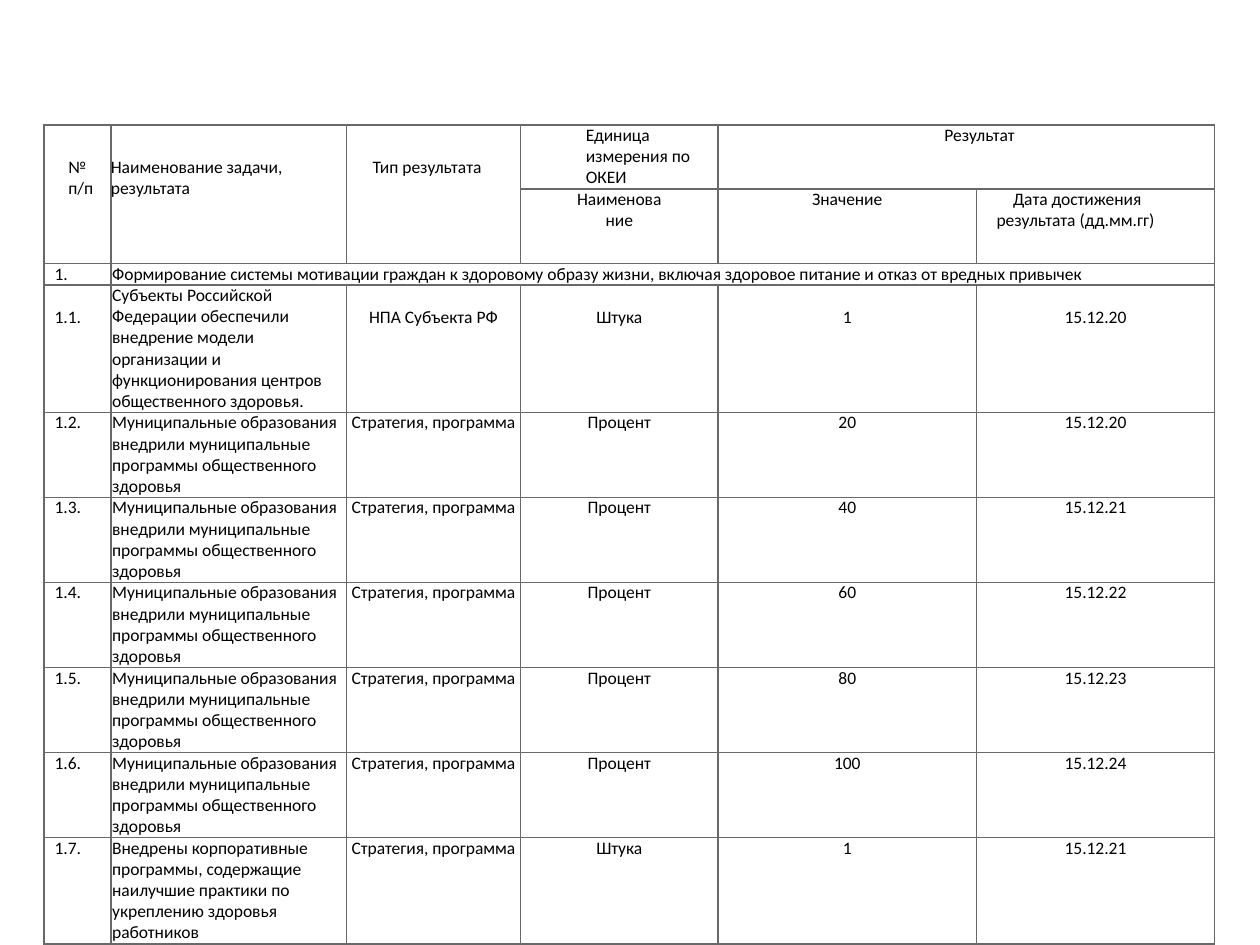
from dataclasses import dataclass

from lxml import etree
from pptx import Presentation
from pptx.dml.color import RGBColor
from pptx.enum import text
from pptx.oxml import ns
from pptx.util import Pt

BLACK = RGBColor(0x00, 0x00, 0x00)
GREY = RGBColor(0x69, 0x69, 0x69)
FONT, SIZE = "Calibri", 10
LEFT, CENTER = text.PP_ALIGN.LEFT, text.PP_ALIGN.CENTER

COL_WIDTHS = [38.2, 134.6, 99.4, 113, 147.6, 136.1]
ROW_HEIGHTS = [36.6, 42.8, 12.1, 72.8] + [48.6] * 5 + [60.8]
HEADER_TOP, FIRST_RESULT_TOP = 18.5, 12.4


@dataclass(frozen=True)
class Format:
    """Paragraph alignment and indents, in points."""
    align: int = LEFT
    left: float = 0
    right: float = 0
    first: float = 0


@dataclass(frozen=True)
class Header:
    row: int
    col: int
    label: str
    fmt: Format = Format()
    top: float = 0
    rows: int = 1
    cols: int = 1


@dataclass(frozen=True)
class Result:
    number: str
    name: str
    kind: str
    unit: str
    value: str
    date: str


NUMBER, NAME = Format(left=6), Format(left=0.7)
KIND = Format(CENTER)
UNIT = Format(CENTER, 30.2, 30.2)
VALUE = Format(CENTER, 45.4, 45.4)
DATE = Format(CENTER, 42.5, 42.5)

HEADERS = [
    Header(0, 0, "№ п/п", Format(left=13.9), HEADER_TOP, rows=2),
    Header(0, 1, "Наименование задачи, результата", top=HEADER_TOP, rows=2),
    Header(0, 2, "Тип результата", Format(left=15), top=HEADER_TOP, rows=2),
    Header(0, 3, "Единица измерения по ОКЕИ", Format(left=37.4)),
    Header(0, 4, "Результат", Format(CENTER, 106.6, 91.5), cols=2),
    Header(1, 3, "Наименование", UNIT),
    Header(1, 4, "Значение", VALUE),
    Header(1, 5, "Дата достижения результата (дд.мм.гг)",
           Format(left=11.5, right=25, first=9.4)),
    Header(2, 0, "1.", NUMBER),
    Header(2, 1, "Формирование системы мотивации граждан к здоровому образу "
                 "жизни, включая здоровое питание и отказ от вредных привычек",
           NAME, cols=5),
]

MUNICIPAL = ("Муниципальные образования внедрили муниципальные программы "
             "общественного здоровья")
STRATEGY = "Стратегия, программа"
RESULTS = [
    Result("1.1.", "Субъекты Российской Федерации обеспечили внедрение модели "
                   "организации и функционирования центров общественного "
                   "здоровья.",
           "НПА Субъекта РФ", "Штука", "1", "15.12.20"),
    *[Result(f"1.{i + 2}.", MUNICIPAL, STRATEGY, "Процент", str(20 * (i + 1)),
             f"15.12.{20 + i}") for i in range(5)],
    Result("1.7.", "Внедрены корпоративные программы, содержащие наилучшие "
                   "практики по укреплению здоровья работников",
           STRATEGY, "Штука", "1", "15.12.21"),
]


def style_cell(cell) -> None:
    """Remove margins and fill, and draw a thin border on every side."""
    cell.margin_left = cell.margin_right = Pt(0)
    cell.margin_top = cell.margin_bottom = Pt(0)
    cell.fill.background()
    props = cell._tc.get_or_add_tcPr()
    for i, side in enumerate(("a:lnL", "a:lnR", "a:lnT", "a:lnB")):
        line = etree.Element(ns.qn(side), w=str(Pt(1)))
        fill = etree.SubElement(line, ns.qn("a:solidFill"))
        etree.SubElement(fill, ns.qn("a:srgbClr"), val=str(GREY))
        props.insert(i, line)


def write_cell(cell, label: str, fmt: Format, top: float = 0) -> None:
    cell.margin_top = Pt(top)
    p = cell.text_frame.paragraphs[0]
    p.alignment = fmt.align
    props = p._p.get_or_add_pPr()
    for name, length in (("marL", fmt.left), ("marR", fmt.right),
                         ("indent", fmt.first)):
        props.set(name, str(Pt(length)))
    r = p.add_run()
    r.text = label
    r.font.name, r.font.size = FONT, Pt(SIZE)
    r.font.color.rgb = BLACK


def add_grid(s):
    """Add the empty bordered table."""
    frame = s.shapes.add_table(len(ROW_HEIGHTS), len(COL_WIDTHS),
                               Pt(25.2), Pt(71.3),
                               Pt(sum(COL_WIDTHS)), Pt(sum(ROW_HEIGHTS)))
    table = frame.table
    table.first_row = table.horz_banding = False
    for column, width in zip(table.columns, COL_WIDTHS):
        column.width = Pt(width)
    for row, height in zip(table.rows, ROW_HEIGHTS):
        row.height = Pt(height)
    for cell in table.iter_cells():
        style_cell(cell)
    return table


def main() -> None:
    prs = Presentation()
    prs.slide_width, prs.slide_height = Pt(720), Pt(540)
    s = prs.slides.add_slide(prs.slide_layouts[6])
    table = add_grid(s)

    # Header rows and the task row
    for h in HEADERS:
        cell = table.cell(h.row, h.col)
        if h.rows > 1 or h.cols > 1:
            cell.merge(table.cell(h.row + h.rows - 1, h.col + h.cols - 1))
        write_cell(cell, h.label, h.fmt, h.top)

    # Result rows
    for i, res in enumerate(RESULTS):
        top = FIRST_RESULT_TOP if i == 0 else 0
        entries = [(res.number, NUMBER, top), (res.name, NAME, 0),
                   (res.kind, KIND, top), (res.unit, UNIT, top),
                   (res.value, VALUE, top), (res.date, DATE, top)]
        for col, (label, fmt, offset) in enumerate(entries):
            write_cell(table.cell(i + 3, col), label, fmt, offset)

    prs.save("out.pptx")


if __name__ == "__main__":
    main()
